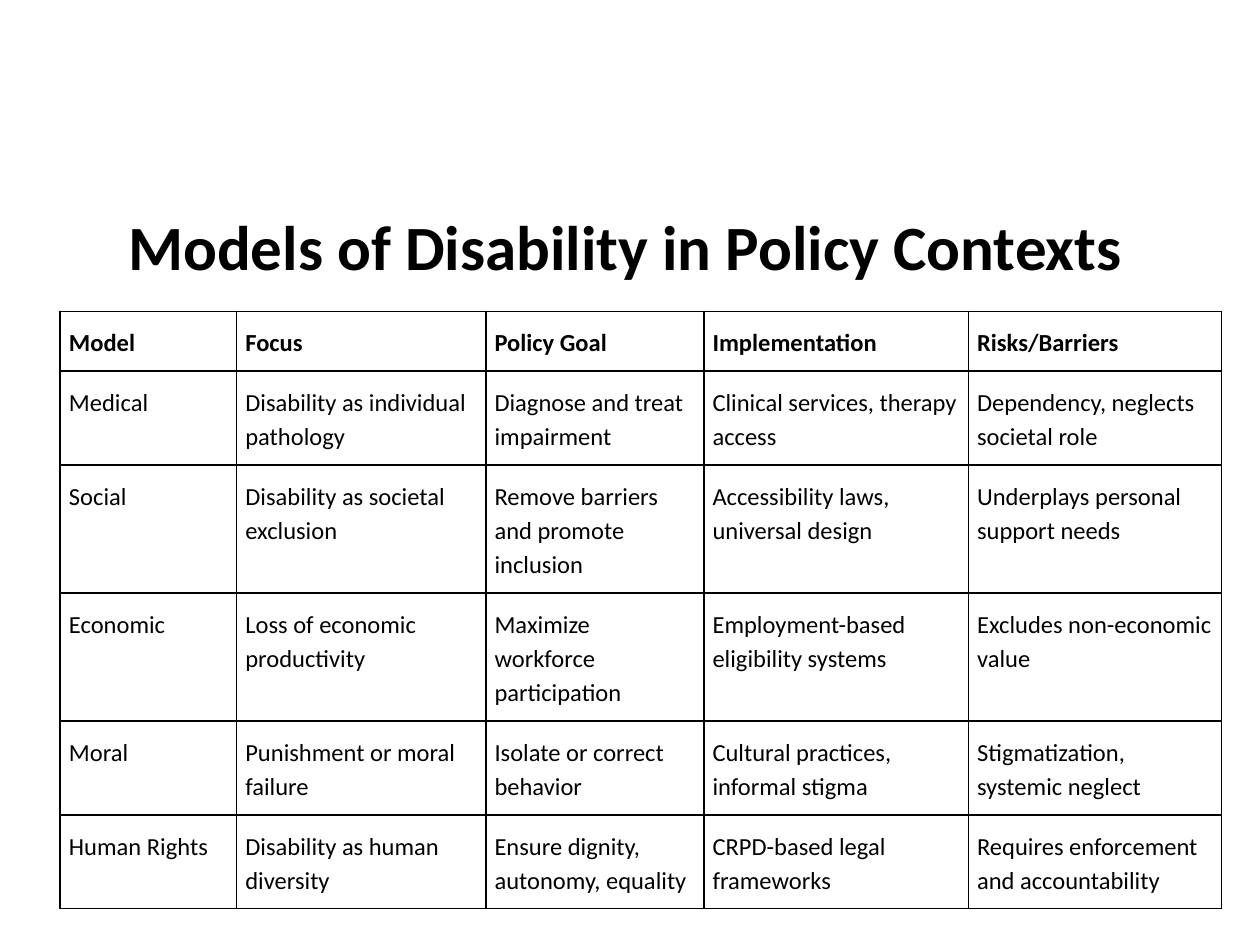
from lxml import etree
from pptx import Presentation
from pptx.dml.color import RGBColor
from pptx.enum.text import MSO_ANCHOR, PP_ALIGN
from pptx.oxml.ns import qn
from pptx.util import Pt

TOP = MSO_ANCHOR.TOP
LEFT = PP_ALIGN.LEFT
FONT = "Calibri"
COLORS = {"text": "000000", "border": "000000"}

TITLE = "Models of Disability in Policy Contexts"
COLUMN_WIDTHS = [100.8, 142.4, 124.6, 151.2, 144.8]
ROW_HEIGHTS = [31.7, 50.4, 50.4, 50.4, 48.2, 50.4]
MODELS = [
    ["Model", "Focus", "Policy Goal", "Implementation", "Risks/Barriers"],
    ["Medical", "Disability as individual pathology", "Diagnose and treat impairment",
     "Clinical services, therapy access", "Dependency, neglects societal role"],
    ["Social", "Disability as societal exclusion", "Remove barriers and promote inclusion",
     "Accessibility laws, universal design", "Underplays personal support needs"],
    ["Economic", "Loss of economic productivity", "Maximize workforce participation",
     "Employment-based eligibility systems", "Excludes non-economic value"],
    ["Moral", "Punishment or moral failure", "Isolate or correct behavior",
     "Cultural practices, informal stigma", "Stigmatization, systemic neglect"],
    ["Human Rights", "Disability as human diversity", "Ensure dignity, autonomy, equality",
     "CRPD-based legal frameworks", "Requires enforcement and accountability"],
]


def style_text(frame, size, bold):
    for para in frame.paragraphs:
        para.alignment = LEFT
        for span in para.runs:
            span.font.name = FONT
            span.font.size = Pt(size)
            span.font.bold = bold
            span.font.color.rgb = RGBColor.from_string(COLORS["text"])


def set_insets(frame, horizontal, vertical):
    frame.margin_left = frame.margin_right = Pt(horizontal)
    frame.margin_top = frame.margin_bottom = Pt(vertical)


def add_title(page):
    box = page.shapes.add_textbox(Pt(66.2), Pt(111.6), Pt(685.4), Pt(45.4))
    frame = box.text_frame
    frame.word_wrap = True
    frame.vertical_anchor = TOP
    set_insets(frame, 7.2, 7.2)
    frame.text = TITLE
    style_text(frame, 36, True)


def add_borders(cell):
    properties = cell._tc.get_or_add_tcPr()
    for position, side in enumerate(("lnL", "lnR", "lnT", "lnB")):
        line = etree.Element(qn(f"a:{side}"), w=str(Pt(1)))
        fill = etree.SubElement(line, qn("a:solidFill"))
        etree.SubElement(fill, qn("a:srgbClr"), val=COLORS["border"])
        properties.insert(position, line)


def fill_cell(cell, text, bold):
    cell.text = text
    cell.fill.background()
    cell.vertical_anchor = TOP
    set_insets(cell, 5, 7.2)
    cell.text_frame.paragraphs[0].line_spacing = 1.15
    style_text(cell.text_frame, 14, bold)
    add_borders(cell)


def add_models_table(page):
    table = page.shapes.add_table(
        len(MODELS), len(COLUMN_WIDTHS), Pt(34.4), Pt(178),
        Pt(sum(COLUMN_WIDTHS)), Pt(sum(ROW_HEIGHTS))).table
    table.horz_banding = False
    for column, width in zip(table.columns, COLUMN_WIDTHS):
        column.width = Pt(width)
    for row, height in zip(table.rows, ROW_HEIGHTS):
        row.height = Pt(height)
    for row_index, texts in enumerate(MODELS):
        for column_index, text in enumerate(texts):
            fill_cell(table.cell(row_index, column_index), text, row_index == 0)


def main():
    deck = Presentation()
    deck.slide_width = Pt(720)
    deck.slide_height = Pt(540)
    page = deck.slides.add_slide(deck.slide_layouts[6])
    add_models_table(page)
    add_title(page)
    deck.save("out.pptx")


if __name__ == "__main__":
    main()
